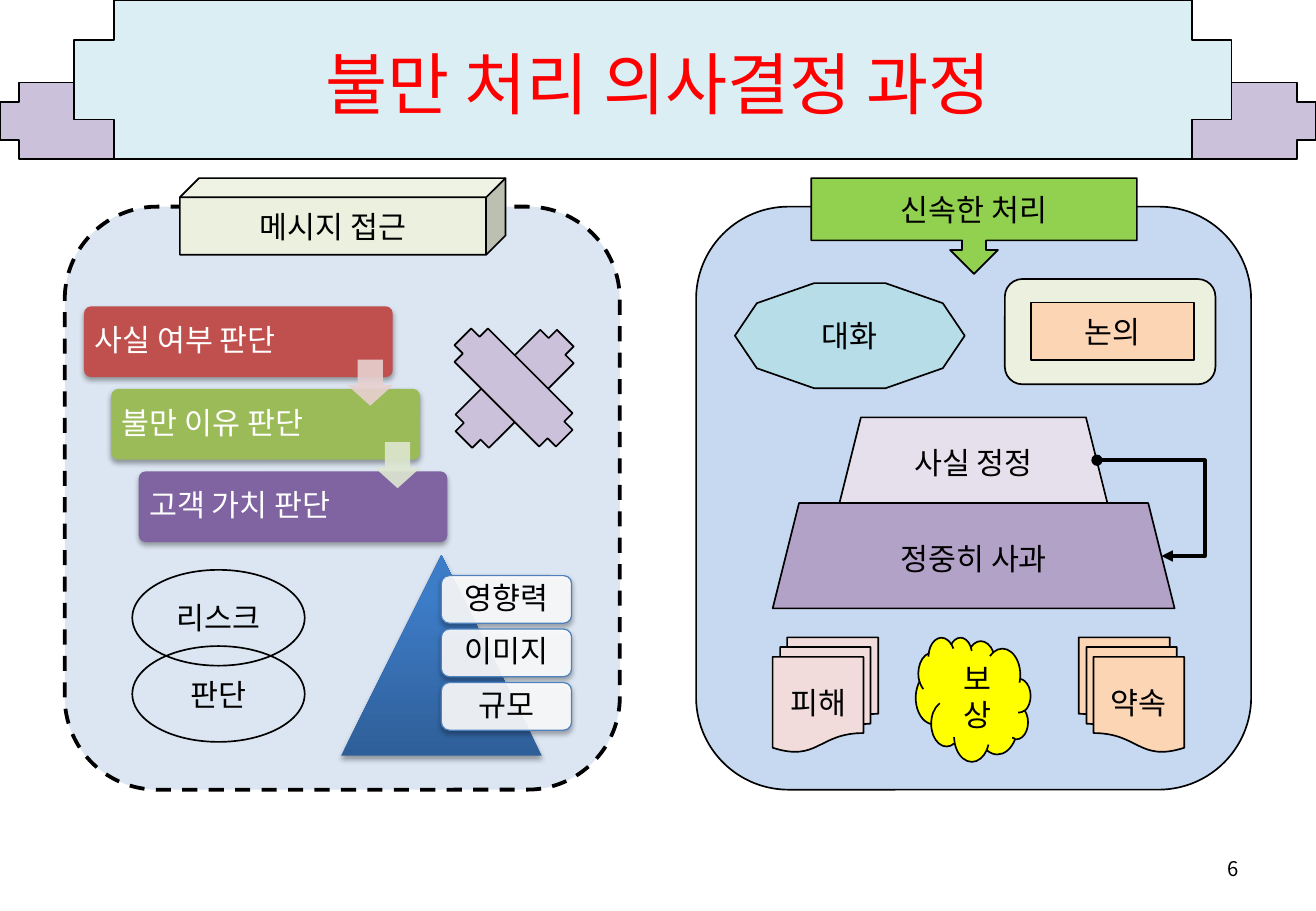
"""Build the slide on the decision process for handling complaints."""
from lxml.etree import SubElement
from pptx import Presentation
from pptx.dml.color import RGBColor
from pptx.enum.dml import MSO_LINE as Dash
from pptx.enum.shapes import MSO_CONNECTOR as Connector, MSO_SHAPE as Kind
from pptx.enum.text import MSO_ANCHOR as Anchor, PP_ALIGN as Align
from pptx.oxml.ns import qn
from pptx.util import Pt

FONT = "Noto Sans CJK KR"
COLOURS = {
    "black": "000000", "white": "FFFFFF", "title": "FF0000",
    "banner": "DBEEF4", "lilac": "CCC1DA", "left panel": "DCE6F2",
    "right panel": "C6D9F1", "cream": "EBF1DE", "red": "C0504D",
    "olive": "9BBB59", "purple": "8064A2", "pale red": "E8D0D0",
    "pale olive": "DEE7D1", "blue": "4F81BD", "deep blue": "2F5F99",
    "bright blue": "3D7CC7", "green": "92D050", "aqua": "B7DEE8",
    "peach": "FCD5B5", "yellow": "FFFF00", "pink": "F2DCDB",
    "mauve": "B3A2C7", "pale mauve": "E6E0EC",
}
COLOURS = {name: RGBColor.from_string(value) for name, value in COLOURS.items()}

deck = Presentation()
deck.slide_width, deck.slide_height = Pt(780), Pt(540)
page = deck.slides.add_slide(deck.slide_layouts[6])


def write(box, text, size=18, colour="black", align=Align.CENTER,
          wrap=False, inset=None, spacing=None):
    """Put formatted text, one paragraph a line, into a box."""
    frame = box.text_frame
    frame.word_wrap = wrap
    frame.vertical_anchor = Anchor.MIDDLE
    if inset is not None:
        frame.margin_left = frame.margin_right = Pt(inset)
        frame.margin_top = frame.margin_bottom = Pt(inset)
    frame.text = text
    for para in frame.paragraphs:
        para.alignment = align
        if spacing:
            para.line_spacing = spacing
        for span in para.runs:
            span.font.size = Pt(size)
            span.font.name = FONT
            span.font.color.rgb = COLOURS[colour]
            SubElement(span.font._element, qn("a:ea"), typeface=FONT)


def draw(kind, place, fill=None, line="black", width=1, text=None, turn=0,
         flip=False, alpha=None, shadow=False, adjust=()):
    """Add a preset shape with its fill, outline, shadow and label."""
    shape = page.shapes.add_shape(kind, *map(Pt, place))
    shape.rotation = turn
    for index, value in enumerate(adjust):
        shape.adjustments[index] = value
    properties = shape.element.spPr
    if flip:
        properties.find(qn("a:xfrm")).set("flipH", "1")
    if fill:
        shape.fill.solid()
        shape.fill.fore_color.rgb = COLOURS[fill]
    else:
        shape.fill.background()
    if alpha:
        colour = properties.find(qn("a:solidFill"))[0]
        SubElement(colour, qn("a:alpha"), val=str(alpha * 1000))
    if line:
        shape.line.color.rgb = COLOURS[line]
        shape.line.width = Pt(width)
    else:
        shape.line.fill.background()
    shape.shadow.inherit = False
    if shadow:
        outer = SubElement(properties.find(qn("a:effectLst")), qn("a:outerShdw"),
                           blurRad="40000", dist="23000", dir="5400000", rotWithShape="0")
        black = SubElement(outer, qn("a:srgbClr"), val="000000")
        SubElement(black, qn("a:alpha"), val="35000")
    if text:
        write(shape, text)
    return shape


draw(Kind.CROSS, (0, 49, 780, 45.4), "lilac")
draw(Kind.CROSS, (44, 0, 686, 94.4), "banner")
title = page.shapes.add_textbox(Pt(39), Pt(4), Pt(702), Pt(90))
write(title, "불만 처리 의사결정 과정", size=40, colour="title", wrap=True)
number = page.shapes.add_textbox(Pt(559), Pt(500.5), Pt(182), Pt(28.8))
write(number, "6", size=12, align=Align.RIGHT, wrap=True)

panel = draw(Kind.ROUNDED_RECTANGLE, (38.4, 122.5, 329, 345.6), "left panel", width=2.25)
panel.line.dash_style = Dash.DASH
draw(Kind.CUBE, (106.6, 105.6, 193, 45.4), "cream", text="메시지 접근")

steps = [("사실 여부 판단", "red"), ("불만 이유 판단", "olive"), ("고객 가치 판단", "purple")]
for row, (text, fill) in enumerate(steps):
    left, top = 49.8 + 16.2 * row, 181.6 + 48.9 * row
    draw(Kind.ROUNDED_RECTANGLE, (left, top, 183, 42), fill, line=None,
         shadow=True, adjust=[0.1])
    label = page.shapes.add_textbox(Pt(left + 1.3), Pt(top + 1.3), Pt(138), Pt(39.4))
    write(label, text, colour="white", align=Align.LEFT, wrap=True, inset=5, spacing=0.9)
for row, fill in enumerate(["pale red", "pale olive"]):
    draw(Kind.DOWN_ARROW, (205.8 + 16.2 * row, 213.2 + 48.9 * row, 27.3, 27.3), fill,
         line=None, alpha=90, adjust=[0.55, 0.45])

draw(Kind.CROSS, (291, 188, 28, 85), "lilac", turn=45)
draw(Kind.CROSS, (290.4, 187.2, 28, 85), "lilac", turn=315)

pyramid = draw(Kind.ISOSCELES_TRIANGLE, (202.2, 329, 119, 119), line=None, shadow=True)
pyramid.fill.gradient()
pyramid.fill.gradient_angle = 90
for stop, (position, colour) in zip(pyramid.fill.gradient_stops,
                                    [(0, "deep blue"), (0.8, "bright blue")]):
    stop.position = position
    stop.color.rgb = COLOURS[colour]
for row, text in enumerate(["영향력", "이미지", "규모"]):
    top = 341.2 + 31.7 * row
    draw(Kind.ROUNDED_RECTANGLE, (261.6, top, 77.2, 28.2), "white", line="blue",
         width=0.75, alpha=90, shadow=True)
    label = page.shapes.add_textbox(Pt(263), Pt(top + 1.4), Pt(74.4), Pt(25.4))
    write(label, text, wrap=True, inset=5, spacing=0.9)

for top, text in [(337.8, "리스크"), (383, "판단")]:
    draw(Kind.OVAL, (78.4, top, 102.2, 56.8), text=text)

draw(Kind.ROUNDED_RECTANGLE, (412.6, 122.5, 329, 345.6), "right panel")
draw(Kind.DOWN_ARROW_CALLOUT, (480.8, 105.6, 193, 56.8), "green", text="신속한 처리")
draw(Kind.DECAGON, (435.6, 167.8, 136.2, 62.4), "aqua", text="대화")
draw(Kind.ROUNDED_RECTANGLE, (595.6, 165.4, 124.8, 62.4), "cream")
draw(Kind.RECTANGLE, (611.2, 179.4, 96.4, 34), "peach", text="논의")
draw(Kind.CLOUD, (542.8, 377.8, 68, 73.6), "yellow", text="보\n상", flip=True)
for left, fill, text, flip in [(458, "pink", "피해", False), (639.4, "peach", "약속", True)]:
    draw(Kind.FLOWCHART_MULTIDOCUMENT, (left, 377.8, 62.6, 68), fill, text=text, flip=flip)
draw(Kind.TRAPEZOID, (458, 298.2, 238.2, 62.4), "mauve", text="정중히 사과")
draw(Kind.TRAPEZOID, (497.6, 247.4, 158.8, 50.8), "pale mauve", text="사실 정정")

link = page.shapes.add_connector(Connector.ELBOW, Pt(650.2), Pt(272.8), Pt(688.4), Pt(329.6))
link.line.color.rgb = COLOURS["black"]
link.line.width = Pt(2.25)
outline = link.line._get_or_add_ln()
SubElement(outline, qn("a:headEnd"), type="oval")
SubElement(outline, qn("a:tailEnd"), type="triangle")
link_properties = link.element.spPr
SubElement(link_properties, qn("a:effectLst"))
guides = link_properties.find(qn("a:prstGeom")).find(qn("a:avLst"))
SubElement(guides, qn("a:gd"), name="adj1", fmla="val 167400")

deck.save("out.pptx")
